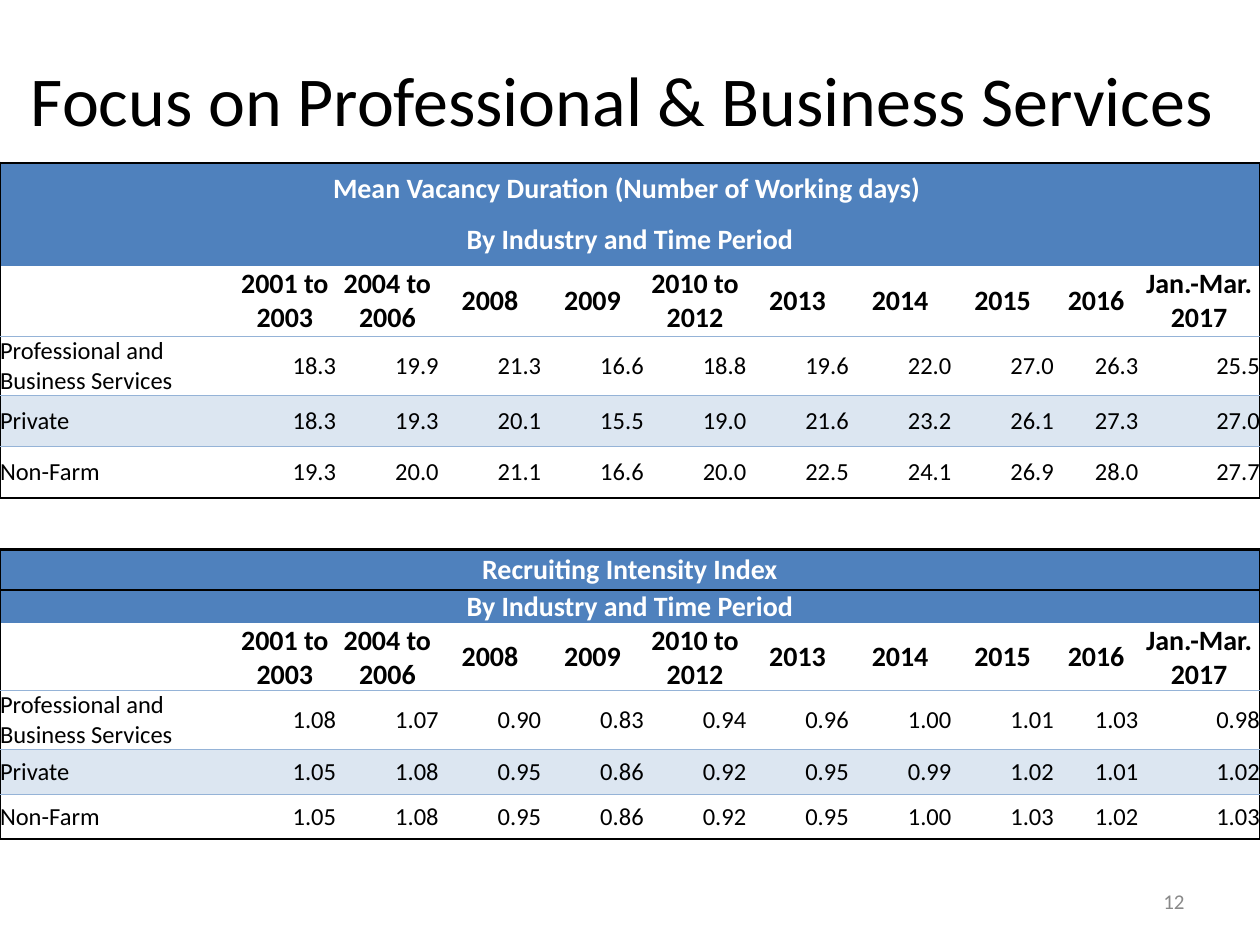
from lxml import etree
from pptx import Presentation
from pptx.dml.color import RGBColor
from pptx.enum.text import MSO_ANCHOR as Anchor, PP_ALIGN as Align
from pptx.oxml.ns import qn
from pptx.util import Pt

FONT = "Calibri"
BLACK, WHITE, GREY = "000000", "FFFFFF", "898989"
BLUE, PALE, RULE = "4F81BD", "DCE6F1", "95B3D7"
OUTER, INNER = (BLACK, 1.5), (RULE, 0.5)
NO_STYLE = "{2D5ABB26-0587-4C30-8999-92F81FD0307C}"

COL_WIDTHS = [133.5] + [58.6] * 8 + [48.3, 69.4]
ROW_HEIGHTS = [29.4, 29.4, 40.4, 29.4, 29.4, 29.4, 29.4,
               23, 17.4, 34.6, 29.4, 25.8, 25.4]
PERIODS = ["2001 to 2003", "2004 to 2006", "2008", "2009", "2010 to 2012",
           "2013", "2014", "2015", "2016", "Jan.-Mar. 2017"]
INDUSTRIES = ["Professional and Business Services", "Private", "Non-Farm"]
DURATION = [
    [18.3, 19.9, 21.3, 16.6, 18.8, 19.6, 22.0, 27.0, 26.3, 25.5],
    [18.3, 19.3, 20.1, 15.5, 19.0, 21.6, 23.2, 26.1, 27.3, 27.0],
    [19.3, 20.0, 21.1, 16.6, 20.0, 22.5, 24.1, 26.9, 28.0, 27.7],
]
INTENSITY = [
    [1.08, 1.07, 0.90, 0.83, 0.94, 0.96, 1.00, 1.01, 1.03, 0.98],
    [1.05, 1.08, 0.95, 0.86, 0.92, 0.95, 0.99, 1.02, 1.01, 1.02],
    [1.05, 1.08, 0.95, 0.86, 0.92, 0.95, 1.00, 1.03, 1.02, 1.03],
]


def rgb(color):
    return RGBColor.from_string(color)


def write(tf, text, size, color=BLACK, bold=False, align=Align.LEFT):
    tf.text = text
    p = tf.paragraphs[0]
    p.alignment = align
    for r in p.runs:
        r.font.name, r.font.size, r.font.bold = FONT, Pt(size), bold
        r.font.color.rgb = rgb(color)


def set_borders(cell, **sides):
    tc_pr = cell._tc.get_or_add_tcPr()
    for side in "LRTB":  # the schema requires this order
        if sides.get(side):
            color, width = sides[side]
            ln = etree.SubElement(tc_pr, qn(f"a:ln{side}"), w=str(Pt(width)))
            fill = etree.SubElement(ln, qn("a:solidFill"))
            etree.SubElement(fill, qn("a:srgbClr"), val=color)


def style_cell(cell, fill=None, **sides):
    cell.margin_left = cell.margin_right = 0
    cell.margin_top = cell.margin_bottom = 0
    cell.vertical_anchor = Anchor.MIDDLE
    set_borders(cell, **sides)
    if fill:
        cell.fill.solid()
        cell.fill.fore_color.rgb = rgb(fill)
    else:
        cell.fill.background()


def add_title(slide, left, top, width, height):
    sp = slide.shapes.title
    sp.left, sp.top, sp.width, sp.height = left, top, width, height
    sp.text_frame.vertical_anchor = Anchor.MIDDLE
    write(sp.text_frame, "Focus on Professional & Business Services ", 40,
          align=Align.CENTER)


def add_slide_number(slide, left, top, width, height):
    tf = slide.shapes.add_textbox(left, top, width, height).text_frame
    tf.word_wrap = True
    tf.vertical_anchor = Anchor.MIDDLE
    write(tf, "12", 12, GREY, align=Align.RIGHT)


def fill_block(table, first_row, headings, values, decimals):
    """Two heading bands, the period row and one row per industry."""
    last_col = len(PERIODS)

    # Heading bands
    for i, heading in enumerate(headings):
        row = first_row + i
        for col in range(last_col + 1):
            style_cell(table.cell(row, col), BLUE, T=OUTER if i == 0 else None,
                       L=OUTER if col == 0 else None,
                       R=OUTER if col in (0, last_col) else None)
        band = table.cell(row, 0)
        band.merge(table.cell(row, last_col))
        write(band.text_frame, heading, 16, WHITE, True, Align.CENTER)

    # Period row, then the industry rows
    lines = [[""] + PERIODS]
    for name, numbers in zip(INDUSTRIES, values):
        lines.append([name] + [f"{n:.{decimals}f}" for n in numbers])
    for i, line in enumerate(lines):
        is_header = i == 0
        for col, text in enumerate(line):
            cell = table.cell(first_row + len(headings) + i, col)
            style_cell(cell, PALE if i == 2 else None,
                       L=OUTER if col == 0 else None,
                       R=OUTER if col == last_col else None,
                       T=None if is_header else INNER,
                       B=OUTER if i == len(lines) - 1 else INNER)
            align = Align.CENTER if is_header else Align.RIGHT
            if col == 0:
                align = Align.LEFT
            write(cell.text_frame, text, 16 if is_header else 14,
                  bold=is_header, align=align)


def add_data_table(slide, left, top, width, height):
    table = slide.shapes.add_table(len(ROW_HEIGHTS), len(COL_WIDTHS),
                                   left, top, width, height).table
    table.first_row = table.horz_banding = False
    table._tbl.tblPr.find(qn("a:tableStyleId")).text = NO_STYLE
    for column, w in zip(table.columns, COL_WIDTHS):
        column.width = Pt(w)
    for row, h in zip(table.rows, ROW_HEIGHTS):
        row.height = Pt(h)

    period = "By Industry and Time Period"
    fill_block(table, 0,
               ["Mean Vacancy Duration (Number of Working days) ", period],
               DURATION, 1)
    # Empty row between the two blocks
    for col in range(len(COL_WIDTHS)):
        style_cell(table.cell(6, col), T=OUTER, B=OUTER)
    fill_block(table, 7, ["Recruiting Intensity Index", period], INTENSITY, 2)


def main():
    prs = Presentation()
    prs.slide_width, prs.slide_height = Pt(720), Pt(540)
    slide = prs.slides.add_slide(prs.slide_layouts[5])
    add_title(slide, 0, Pt(29), Pt(720), Pt(54))
    add_slide_number(slide, Pt(516), Pt(500.5), Pt(168), Pt(28.8))
    add_data_table(slide, 0, Pt(93), Pt(720), Pt(sum(ROW_HEIGHTS)))
    prs.save("out.pptx")


if __name__ == "__main__":
    main()
